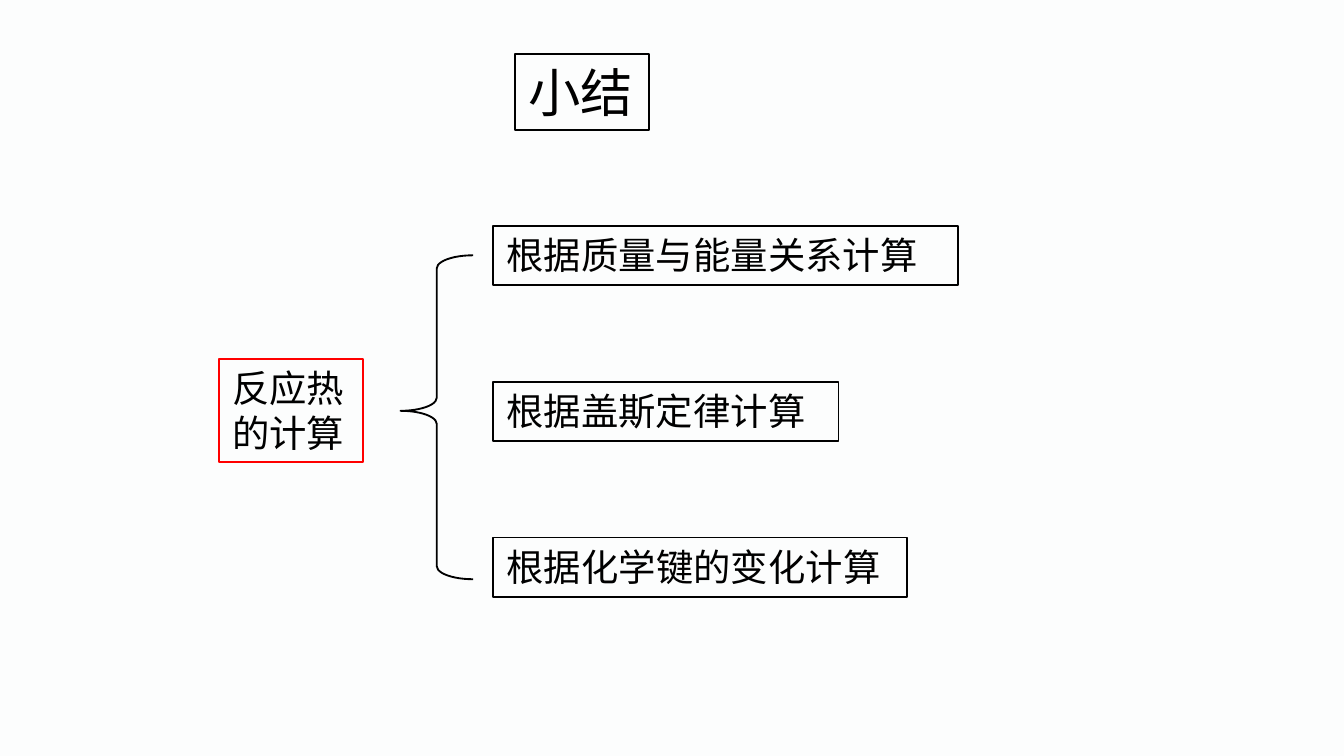
from lxml import etree
from pptx import Presentation
from pptx.dml.color import RGBColor
from pptx.enum import shapes, text
from pptx.oxml import ns
from pptx.util import Inches, Pt

FONT = "Noto Sans CJK SC"
BLACK = RGBColor(0x00, 0x00, 0x00)
RED = RGBColor(0xFF, 0x00, 0x00)
BACKGROUND = RGBColor(0xFC, 0xFD, 0xFD)


def write_framed(box, lines, *, size=20, border=BLACK):
    """Fill a box with one paragraph per line and frame it."""
    box.line.color.rgb = border
    box.line.width = Pt(1)
    frame = box.text_frame
    frame.text = "\n".join(lines)
    frame.word_wrap = True
    frame.vertical_anchor = text.MSO_ANCHOR.TOP
    frame.auto_size = text.MSO_AUTO_SIZE.NONE
    for para in frame.paragraphs:
        para.alignment = text.PP_ALIGN.LEFT
        for span in para.runs:
            span.font.name = FONT
            span.font.size = Pt(size)
            span.font.color.rgb = BLACK
            east_asian = etree.SubElement(span.font._element, ns.qn("a:ea"))
            east_asian.set("typeface", FONT)


deck = Presentation()
deck.slide_width = Inches(10)
deck.slide_height = Inches(10) * 9 // 16
page = deck.slides.add_slide(deck.slide_layouts.get_by_name("Title Only"))
page.background.fill.solid()
page.background.fill.fore_color.rgb = BACKGROUND

# Title
title = page.shapes.title
title.left, title.top = Inches(3.83), Inches(0.4)
title.width, title.height = Inches(1), Inches(0.57)
write_framed(title, ["小结"], size=28)

# Topic on the left
topic = page.shapes.add_textbox(Inches(1.63), Inches(2.67), Inches(1.07), Inches(0.77))
write_framed(topic, ["反应热", "的计算"], border=RED)

# Methods, evenly spaced on the right
methods = [
    ("根据质量与能量关系计算", 3.46),
    ("根据盖斯定律计算", 2.57),
    ("根据化学键的变化计算", 3.08),
]
for row, (method, width) in enumerate(methods):
    top = 1.68 + row * 1.16
    box = page.shapes.add_textbox(Inches(3.67), Inches(top), Inches(width), Inches(0.44))
    write_framed(box, [method])

# Brace joining the topic to its methods
brace = page.shapes.add_shape(
    shapes.MSO_SHAPE.LEFT_BRACE, Inches(2.98), Inches(1.9), Inches(0.54), Inches(2.41)
)
brace.adjustments[0] = 0.18
brace.adjustments[1] = 0.48
brace.shadow.inherit = False
brace.fill.background()
brace.line.color.rgb = BLACK
brace.line.width = Pt(1)

deck.save("out.pptx")
